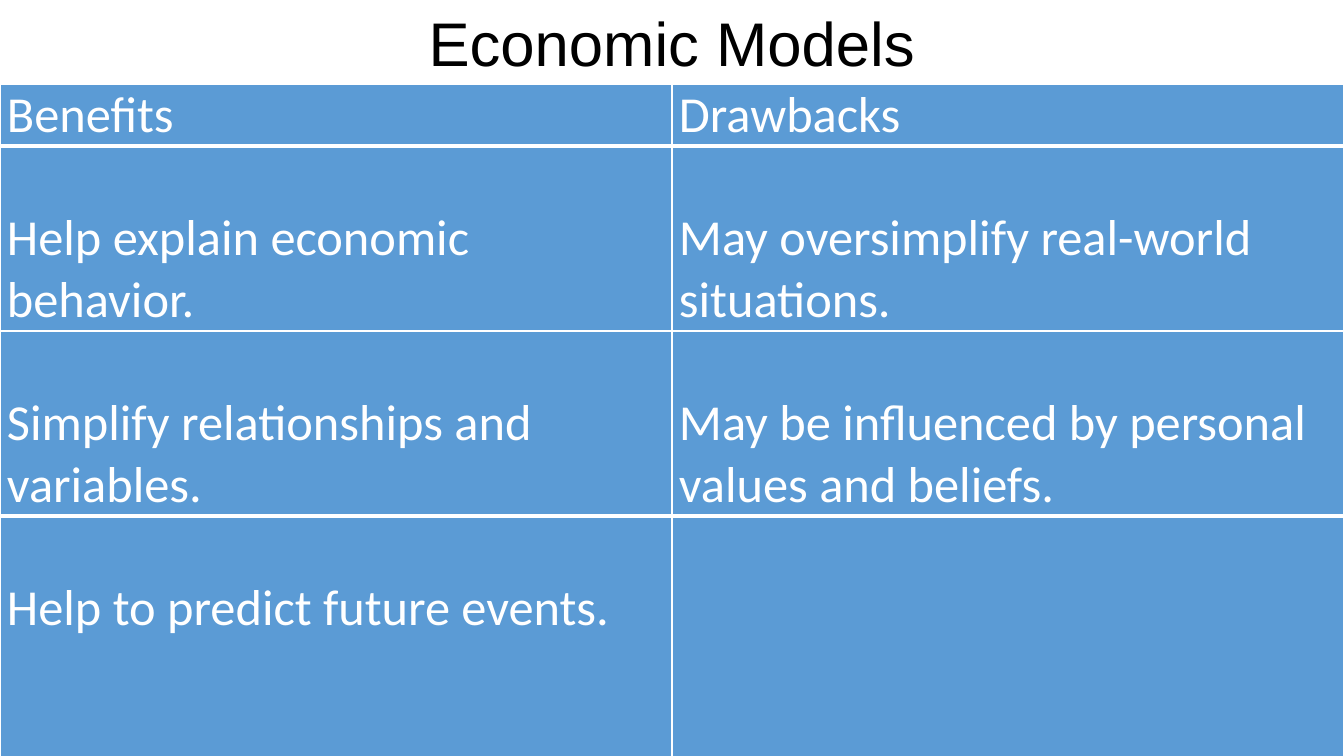
from lxml import etree
from pptx import Presentation
from pptx.dml.color import RGBColor
from pptx.enum import text
from pptx.oxml import ns
from pptx.util import Pt

# Content
TITLE = "Economic Models"
ROWS = [
    ("Benefits", "Drawbacks"),
    ("Help explain economic behavior.", "May oversimplify real-world situations."),
    ("Simplify relationships and variables.",
     "May be influenced by personal values and beliefs."),
    ("Help to predict future events.", ""),
]

# Format, lengths in points
WHITE = RGBColor(0xFF, 0xFF, 0xFF)
BLACK = RGBColor(0, 0, 0)
BLUE = RGBColor(0x5B, 0x9B, 0xD5)
WIDTH, HEIGHT, TOP = 960, 540, 60.4
LINE = 43.9
HEIGHTS = [LINE, 3 * LINE, 3 * LINE]
HEIGHTS.append(HEIGHT - TOP - sum(HEIGHTS))
THIN, THICK = 1, 3
TITLE_FONT = {"name": "Arial", "size": Pt(44)}
CELL_FONT = {"name": "Calibri", "size": Pt(36)}


def apply(obj, values):
    for name, value in values.items():
        setattr(obj, name, value)


def write(tf, words, font, color):
    p = tf.paragraphs[0]
    apply(p.font, font)
    if words:
        r = p.add_run()
        r.text = words
        apply(r.font, font)
        r.font.color.rgb = color
    return p


def add_borders(cell, widths):
    tc_pr = cell._tc.get_or_add_tcPr()
    for i, (side, width) in enumerate(widths.items()):
        ln = etree.Element(ns.qn("a:ln" + side), w=str(Pt(width)))
        fill = etree.SubElement(ln, ns.qn("a:solidFill"))
        etree.SubElement(fill, ns.qn("a:srgbClr"), val=str(WHITE))
        tc_pr.insert(i, ln)


prs = Presentation()
apply(prs, {"slide_width": Pt(WIDTH), "slide_height": Pt(HEIGHT)})
s = prs.slides.add_slide(prs.slide_layouts[6])

# Table
table = s.shapes.add_table(len(ROWS), 2, 0, Pt(TOP), Pt(WIDTH), Pt(HEIGHT - TOP)).table
apply(table, {"first_row": False, "horz_banding": False})
for col in table.columns:
    col.width = Pt(WIDTH / 2)
last = len(ROWS) - 1
for i, row in enumerate(ROWS):
    table.rows[i].height = Pt(HEIGHTS[i])
    for j, words in enumerate(row):
        cell = table.cell(i, j)
        # Body text starts one line below the top of its cell
        apply(cell, {"margin_left": Pt(5), "margin_right": Pt(5),
                     "margin_top": Pt(LINE if i and words else 0), "margin_bottom": 0})
        cell.fill.solid()
        cell.fill.fore_color.rgb = BLUE
        write(cell.text_frame, words, CELL_FONT, WHITE)
        add_borders(cell, {"L": THIN, "R": THIN,
                           "T": THICK if i in (1, last) else THIN,
                           "B": THICK if i in (0, last - 1) else THIN})

# Title
title_width = 365
sp = s.shapes.add_textbox(Pt((WIDTH - title_width) / 2), 0, Pt(title_width), Pt(TOP))
tf = sp.text_frame
apply(tf, {"word_wrap": False, "vertical_anchor": text.MSO_ANCHOR.MIDDLE,
           "auto_size": text.MSO_AUTO_SIZE.SHAPE_TO_FIT_TEXT})
write(tf, TITLE, TITLE_FONT, BLACK).alignment = text.PP_ALIGN.CENTER

prs.save("out.pptx")
